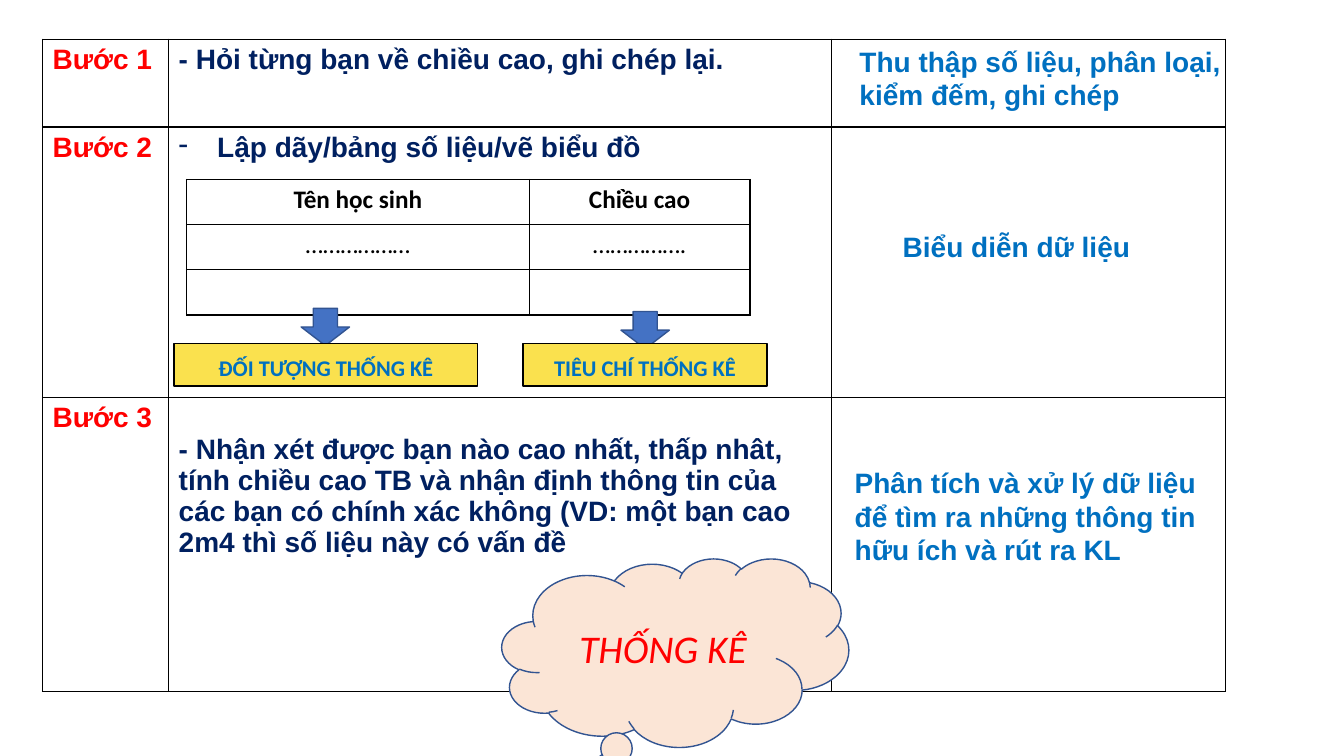
from dataclasses import dataclass

from lxml.etree import SubElement as Sub, Element
from pptx import Presentation
from pptx.dml.color import RGBColor as Rgb
from pptx.enum.shapes import MSO_SHAPE as Kind
from pptx.enum.text import MSO_ANCHOR as Anchor, PP_ALIGN as Align
from pptx.oxml.ns import qn
from pptx.util import Cm, Pt

# Content
STEPS = [
    ("Bước 1", "- Hỏi từng bạn về chiều cao, ghi chép lại.", ""),
    ("Bước 2", "Lập dãy/bảng số liệu/vẽ biểu đồ", ""),
    ("Bước 3", "- Nhận xét được bạn nào cao nhất, thấp nhât, tính chiều cao TB "
     "và nhận định thông tin của các bạn có chính xác không (VD: một bạn cao "
     "2m4 thì số liệu này có vấn đề", ""),
]
PUPILS = [("Tên học sinh", "Chiều cao"), ("………………", "……………."), ("", "")]

# Text, box (left, top, width, height), wrap
GOALS = [
    ("Thu thập số liệu, phân loại,\nkiểm đếm, ghi chép", (21.41, 0.99, 9.88, 1.96), False),
    ("Biểu diễn dữ liệu", (22.5, 5.66, 6.3, 1.12), False),
    ("Phân tích và xử lý dữ liệu để tìm ra những thông tin hữu ích và rút ra KL",
     (21.29, 11.61, 9.6, 3.68), True),
]
# Text, label left and width, arrow left and top
TERMS = [
    ("ĐỐI TƯỢNG THỐNG KÊ", 4.39, 7.65, 7.59, 7.77),
    ("TIÊU CHÍ THỐNG KÊ", 13.18, 6.15, 15.65, 7.85),
]
TOPIC = "THỐNG KÊ"


@dataclass
class Theme:
    sans: str = "Arial"
    body: str = "Calibri"
    red: str = "FF0000"
    navy: str = "002060"
    blue: str = "0070C0"
    black: str = "000000"
    arrow: str = "4472C4"
    edge: str = "325491"
    yellow: str = "FAE14E"
    peach: str = "FBE5D6"
    main: int = 20
    grid: int = 18
    label: int = 16
    big: int = 28


look = Theme()
deck = Presentation()
deck.slide_width, deck.slide_height = Cm(33.87), Cm(19.05)
page = deck.slides.add_slide(deck.slide_layouts[6])


def write(frame, text, font=look.sans, size=look.main, color=look.blue, bold=True,
          slant=False, align=Align.LEFT, space=None, dash=None):
    for i, line in enumerate(text.split("\n")):
        para = frame.add_paragraph() if i else frame.paragraphs[0]
        if dash:
            props = para._p.get_or_add_pPr()
            props.set("marL", str(Cm(dash)))
            props.set("indent", str(-Cm(dash)))
            Sub(props, qn("a:buChar"), char="-")
        para.alignment = align
        if space:
            para.line_spacing = space
        para.font.size = Pt(size)
        if line:
            run = para.add_run()
            run.text = line
            face = run.font
            face.name, face.size, face.bold, face.italic = font, Pt(size), bold, slant
            face.color.rgb = Rgb.from_string(color)


def border(cell):
    props = cell._tc.get_or_add_tcPr()
    for i, side in enumerate(("lnL", "lnR", "lnT", "lnB")):
        line = Element(qn("a:" + side), w=str(Pt(1)))
        Sub(Sub(line, qn("a:solidFill")), qn("a:srgbClr"), val=look.black)
        props.insert(i, line)


def grid(rows, left, top, wides, highs, style):
    table = page.shapes.add_table(len(rows), len(wides), Cm(left), Cm(top),
                                  Cm(sum(wides)), Cm(sum(highs))).table
    table.first_row = table.horz_banding = False
    for col, wide in zip(table.columns, wides):
        col.width = Cm(wide)
    for r, (row, high) in enumerate(zip(rows, highs)):
        table.rows[r].height = Cm(high)
        for c, text in enumerate(row):
            cell = table.cell(r, c)
            cell.fill.background()
            border(cell)
            write(cell.text_frame, text, **style(r, c))
    return table


def shape(kind, box, fill, edge):
    item = page.shapes.add_shape(kind, *map(Cm, box))
    item.shadow.inherit = False
    item.fill.solid()
    item.fill.fore_color.rgb = Rgb.from_string(fill)
    item.line.color.rgb = Rgb.from_string(edge)
    item.line.width = Pt(1)
    item.text_frame.word_wrap = True
    return item


def step_style(r, c):
    return dict(color=look.navy if c else look.red, dash=0.97 if (r, c) == (1, 1) else None)


def pupil_style(r, c):
    return dict(font=look.body, size=look.grid, color=look.black, bold=r == 0,
                align=Align.CENTER)


# Table of steps, the last one set one line lower
steps = grid(STEPS, 1.07, 0.99, (3.18, 16.71, 9.93), (2.21, 6.81, 7.42), step_style)
steps.cell(2, 1).margin_top = Cm(0.92)

# Goal of each step
for text, box, wrap in GOALS:
    frame = page.shapes.add_textbox(*map(Cm, box)).text_frame
    frame.word_wrap = wrap
    write(frame, text)

# Sample table with its terms
grid(PUPILS, 4.7, 4.52, (8.64, 5.56), (1.14,) * 3, pupil_style)
for text, left, wide, tip, top in TERMS:
    shape(Kind.DOWN_ARROW, (tip, top, 1.22, 0.94), look.arrow, look.edge)
    label = shape(Kind.RECTANGLE, (left, 8.66, wide, 1.07), look.yellow, look.black)
    label.text_frame.vertical_anchor = Anchor.TOP
    write(label.text_frame, text, font=look.body, size=look.label,
          align=Align.CENTER, space=1.2)

# Topic cloud
cloud = shape(Kind.CLOUD_CALLOUT, (12.65, 14.07, 8.74, 4.75), look.peach, look.edge)
cloud.text_frame.vertical_anchor = Anchor.MIDDLE
write(cloud.text_frame, TOPIC, font=look.body, size=look.big, color=look.red,
      bold=False, slant=True, align=Align.CENTER)

deck.save("out.pptx")
